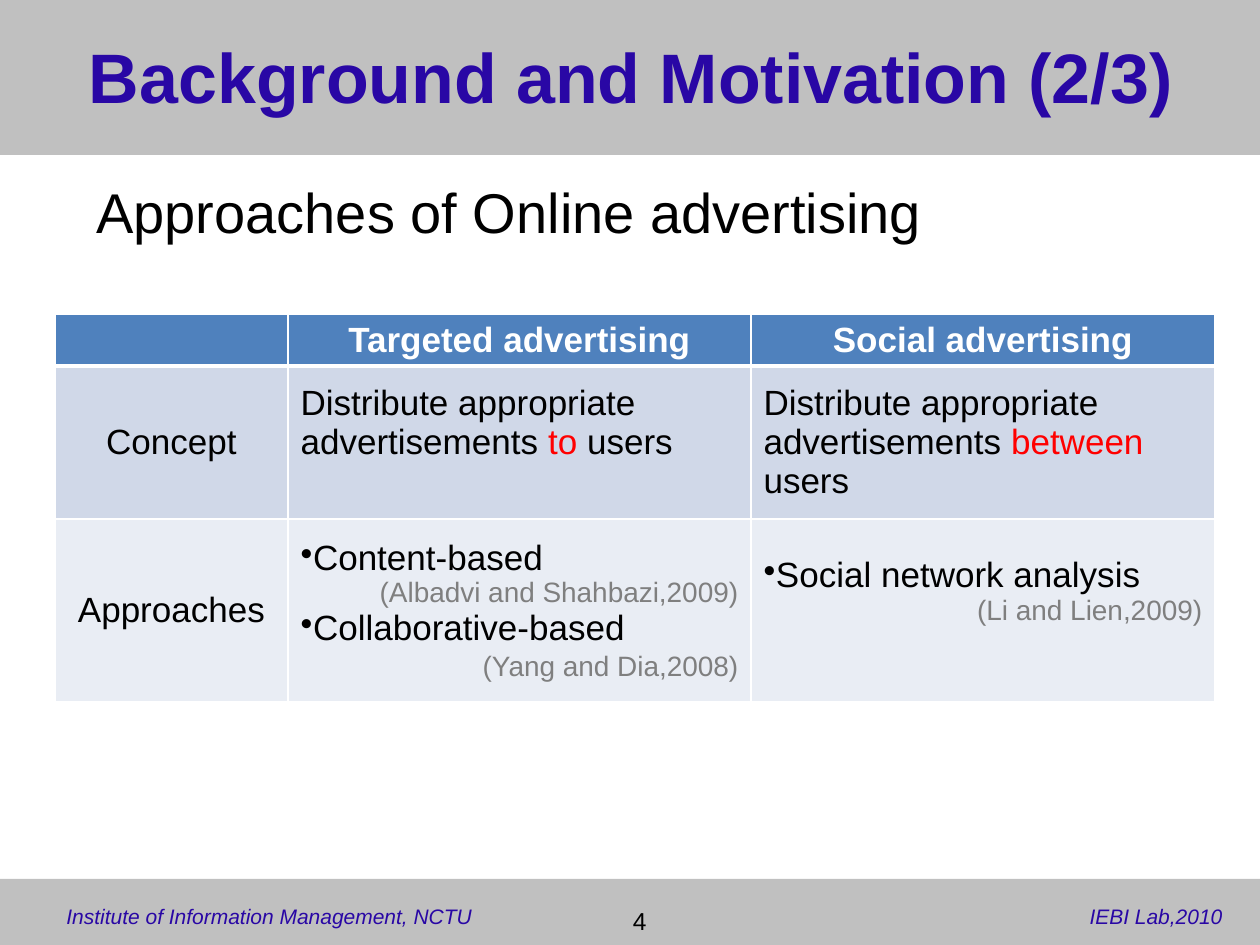
from lxml.etree import SubElement
from pptx import Presentation
from pptx.dml.color import RGBColor
from pptx.enum.shapes import MSO_SHAPE
from pptx.enum.text import MSO_ANCHOR, PP_ALIGN
from pptx.oxml.ns import qn
from pptx.util import Emu, Pt

EMU_PER_PX = 914400 / 126
WIDTH, HEIGHT = 1260, 945
BLACK, WHITE, GRAY, RED = "000000", "FFFFFF", "7F7F7F", "FF0000"
INDIGO, SILVER = "2907A5", "C0C0C0"


def px(length):
    return Emu(round(length * EMU_PER_PX))


def color(value):
    return RGBColor.from_string(value)


def format_font(font, size, hex_color, bold=False, italic=False):
    font.name = "Arial"
    font.size = Pt(size)
    font.bold = bold
    font.italic = italic
    font.color.rgb = color(hex_color)


def add_band(slide, left, top, width, height):
    band = slide.shapes.add_shape(
        MSO_SHAPE.RECTANGLE, px(left), px(top), px(width), px(height))
    band.shadow.inherit = False
    band.fill.solid()
    band.fill.fore_color.rgb = color(SILVER)
    band.line.fill.background()


def add_text(slide, box, text, size, hex_color, align=PP_ALIGN.LEFT,
             anchor=MSO_ANCHOR.MIDDLE, wrap=True, **style):
    text_box = slide.shapes.add_textbox(*map(px, box))
    text_frame = text_box.text_frame
    text_frame.word_wrap = wrap
    text_frame.vertical_anchor = anchor
    text_frame.text = text
    paragraph = text_frame.paragraphs[0]
    paragraph.alignment = align
    format_font(paragraph.runs[0].font, size, hex_color, **style)


def add_header(slide, left, top, width, height):
    add_band(slide, left, top, width, height)
    add_text(slide, (left + 64, top, width - 126, height),
             "Background and Motivation (2/3)", 40, INDIGO, PP_ALIGN.CENTER, bold=True)


def add_footer(slide, left, top, width, height):
    add_band(slide, left, top, width, height)
    add_text(slide, (left + 54, top + 4, 500, height),
             "Institute of Information Management, NCTU", 12, INDIGO, italic=True)
    add_text(slide, (left + width - 325, top + 4, 300, height),
             "IEBI Lab,2010", 12, INDIGO, PP_ALIGN.RIGHT, italic=True)
    add_text(slide, (left + 357, top + 21, 302, 45), "4", 14, BLACK,
             PP_ALIGN.RIGHT, MSO_ANCHOR.TOP)


def set_borders(cell, top, bottom):
    properties = cell._tc.get_or_add_tcPr()
    fill = properties[0]
    for side, points in (("L", 1), ("R", 1), ("T", top), ("B", bottom)):
        line = SubElement(properties, qn(f"a:ln{side}"), w=str(Pt(points)))
        solid = SubElement(line, qn("a:solidFill"))
        SubElement(solid, qn("a:srgbClr"), val=WHITE)
        fill.addprevious(line)


def style_cell(cell, fill, row):
    cell.fill.solid()
    cell.fill.fore_color.rgb = color(fill)
    cell.vertical_anchor = MSO_ANCHOR.MIDDLE
    cell.margin_top = cell.margin_bottom = px(5)
    set_borders(cell, 3 if row == 1 else 1, 3 if row == 0 else 1)


def fill_label(cell, text, hex_color, bold=False):
    cell.text_frame.text = text
    paragraph = cell.text_frame.paragraphs[0]
    paragraph.alignment = PP_ALIGN.CENTER
    format_font(paragraph.font, 20, hex_color, bold)
    for run in paragraph.runs:
        format_font(run.font, 20, hex_color, bold)


def fill_concept(cell, keyword):
    cell.vertical_anchor = MSO_ANCHOR.TOP
    cell.margin_top = px(18)
    paragraph = cell.text_frame.paragraphs[0]
    for text, hex_color in (("Distribute appropriate advertisements ", BLACK),
                            (keyword, RED), (" users", BLACK)):
        run = paragraph.add_run()
        run.text = text
        format_font(run.font, 20, hex_color)


def fill_approaches(cell, approaches):
    text_frame = cell.text_frame
    text_frame.text = "\n".join(f"{name}\n{citation}" for name, citation in approaches)
    for index, paragraph in enumerate(text_frame.paragraphs):
        if index % 2:
            paragraph.alignment = PP_ALIGN.RIGHT
            format_font(paragraph.runs[0].font, 16, GRAY)
        else:
            SubElement(paragraph._p.get_or_add_pPr(), qn("a:buChar"), char="•")
            format_font(paragraph.runs[0].font, 20, BLACK)


def add_comparison(slide, left, top, widths, heights):
    frame = slide.shapes.add_table(
        len(heights), len(widths), px(left), px(top), px(sum(widths)), px(sum(heights)))
    table = frame.table
    for column, width in zip(table.columns, widths):
        column.width = px(width)
    for row, height in zip(table.rows, heights):
        row.height = px(height)
    for row_index, fill in enumerate(("4F81BD", "D0D8E8", "E9EDF4")):
        for cell in table.rows[row_index].cells:
            style_cell(cell, fill, row_index)

    for column, title in enumerate(("", "Targeted advertising", "Social advertising")):
        fill_label(table.cell(0, column), title, WHITE, bold=True)
    for row, title in enumerate(("Concept", "Approaches"), start=1):
        fill_label(table.cell(row, 0), title, BLACK)
    for column, keyword in enumerate(("to", "between"), start=1):
        fill_concept(table.cell(1, column), keyword)
    fill_approaches(table.cell(2, 1), (
        ("Content-based", "(Albadvi and Shahbazi,2009)"),
        ("Collaborative-based", "(Yang and Dia,2008)")))
    table.cell(2, 1).text_frame.paragraphs[-1].space_before = Pt(2)
    social = table.cell(2, 2)
    fill_approaches(social, (("Social network analysis", "(Li and Lien,2009)"),))
    social.vertical_anchor = MSO_ANCHOR.TOP
    social.margin_top = px(37)


def main():
    presentation = Presentation()
    presentation.slide_width = px(WIDTH)
    presentation.slide_height = px(HEIGHT)
    slide = presentation.slides.add_slide(presentation.slide_layouts[6])
    add_footer(slide, 0, 879, WIDTH, 66)
    add_header(slide, 0, -4, WIDTH, 159)
    add_comparison(slide, 55, 314, (233, 463, 464), (51, 153, 183))
    add_text(slide, (84, 171, 858, 79), "Approaches of Online advertising", 32, BLACK,
             anchor=MSO_ANCHOR.TOP, wrap=False)
    presentation.save("out.pptx")


if __name__ == "__main__":
    main()
